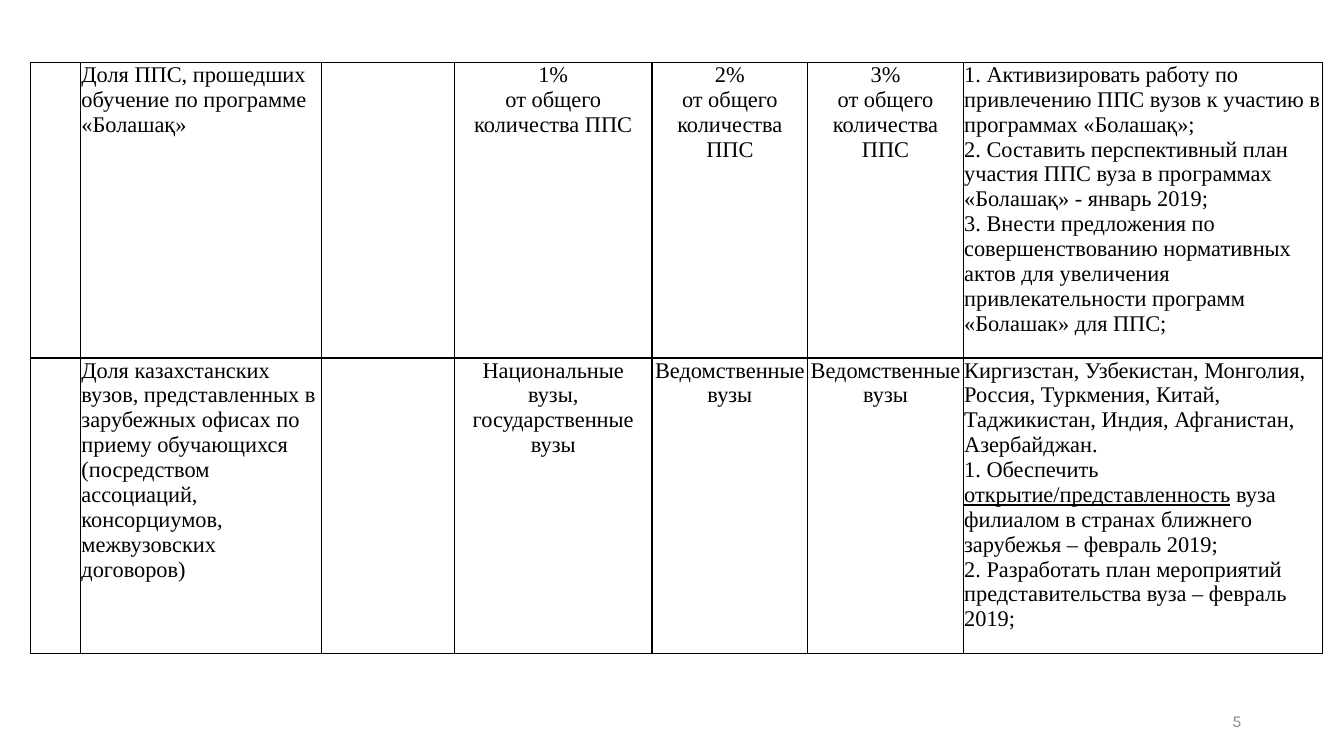
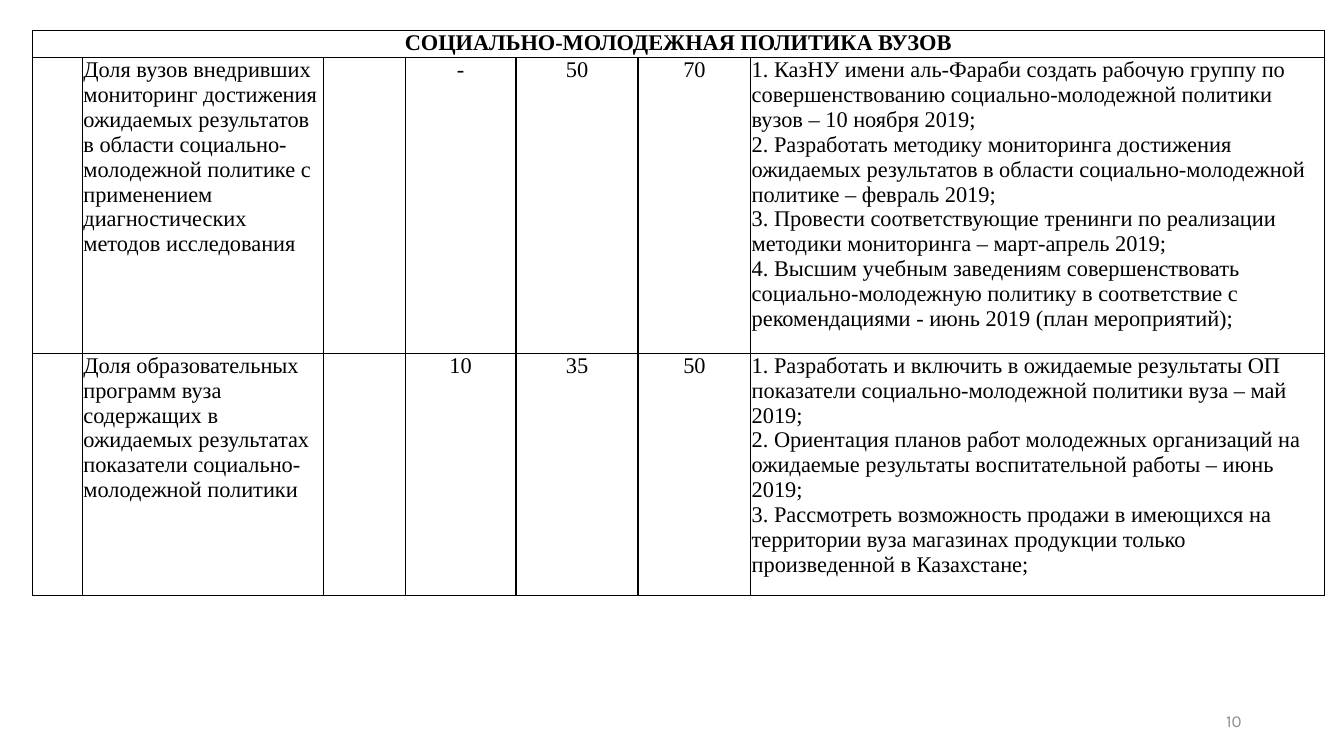
from lxml import etree
from pptx import Presentation
from pptx.dml.color import RGBColor
from pptx.enum.text import MSO_ANCHOR, PP_ALIGN
from pptx.oxml.ns import qn
from pptx.util import Pt

LEFT, CENTER, RIGHT = PP_ALIGN.LEFT, PP_ALIGN.CENTER, PP_ALIGN.RIGHT
MIDDLE = MSO_ANCHOR.MIDDLE
BLACK, GRAY = "000000", "8C8C8C"
SERIF, SANS = "Times New Roman", "Karla"
LINE = 17.8  # height of one text line in a row
INSET = 0.6
CENTERED = (3, 4, 5)  # columns with target values

STAFF = {
    "page": "5",
    "at": (21.6, 44.6),
    "cols": (36, 172, 95, 141.2, 111.2, 111.2, 256.6),
    "lines": (11, 11),
    "rows": [
        ["", "Доля ППС, прошедших обучение по программе «Болашақ»", "",
         "1%\nот общего количества ППС",
         "2%\nот общего количества ППС",
         "3%\nот общего количества ППС",
         "1. Активизировать работу по привлечению ППС вузов к участию в "
         "программах «Болашақ»;\n"
         "2. Составить перспективный план участия ППС вуза в программах "
         "«Болашақ» - январь 2019;\n"
         "3. Внести предложения по совершенствованию нормативных актов для "
         "увеличения привлекательности программ «Болашак» для ППС;"],
        ["", "Доля казахстанских вузов, представленных в зарубежных офисах по "
         "приему обучающихся (посредством ассоциаций, консорциумов, "
         "межвузовских договоров)", "",
         "Национальные вузы,\nгосударственные вузы",
         "Ведомственные вузы",
         "Ведомственные вузы",
         "Киргизстан, Узбекистан, Монголия, Россия, Туркмения, Китай, "
         "Таджикистан, Индия, Афганистан, Азербайджан.\n"
         "1. Обеспечить _открытие/представленность_ вуза филиалом в странах "
         "ближнего зарубежья – февраль 2019;\n"
         "2. Разработать план мероприятий представительства вуза – февраль "
         "2019;"],
    ],
}

YOUTH = {
    "page": "10",
    "at": (23, 22),
    "cols": (36, 172, 58.4, 79.2, 87.2, 80.6, 409.8),
    "lines": (1, 11, 9),
    "head": "СОЦИАЛЬНО-МОЛОДЕЖНАЯ ПОЛИТИКА ВУЗОВ",
    "rows": [
        ["", "Доля вузов внедривших мониторинг достижения ожидаемых "
         "результатов в области социально-молодежной политике с применением "
         "диагностических методов исследования", "", "-", "50", "70",
         "1. КазНУ имени аль-Фараби создать рабочую группу по "
         "совершенствованию социально-молодежной политики вузов – "
         "10 ноября 2019;\n"
         "2. Разработать методику мониторинга достижения ожидаемых "
         "результатов в области социально-молодежной политике – "
         "февраль 2019;\n"
         "3. Провести соответствующие тренинги по реализации методики "
         "мониторинга – март-апрель 2019;\n"
         "4. Высшим учебным заведениям совершенствовать "
         "социально-молодежную политику в соответствие с рекомендациями - "
         "июнь 2019 (план мероприятий);"],
        ["", "Доля образовательных программ вуза содержащих в ожидаемых "
         "результатах показатели социально-молодежной политики", "",
         "10", "35", "50",
         "1. Разработать и включить в ожидаемые результаты ОП показатели "
         "социально-молодежной политики вуза – май 2019;\n"
         "2. Ориентация планов работ молодежных организаций на ожидаемые "
         "результаты воспитательной работы – июнь 2019;\n"
         "3. Рассмотреть возможность продажи в имеющихся на территории вуза "
         "магазинах продукции только произведенной в Казахстане;"],
    ],
}


def color(code):
    return RGBColor.from_string(code)


def style(para, face, size, code, align, bold=False):
    para.alignment = align
    font = para.font
    font.name, font.size, font.bold = face, Pt(size), bold
    font.color.rgb = color(code)


def border(cell):
    props = cell._tc.get_or_add_tcPr()
    for side in ("lnL", "lnR", "lnT", "lnB"):
        line = etree.SubElement(props, qn("a:" + side), w=str(Pt(1)))
        fill = etree.SubElement(line, qn("a:solidFill"))
        etree.SubElement(fill, qn("a:srgbClr"), val=BLACK)


def write(cell, text, align, bold=False):
    """Fill a cell: newlines part paragraphs, underscores mark underlining."""
    frame = cell.text_frame
    for i, line in enumerate(text.split("\n")):
        para = frame.add_paragraph() if i else frame.paragraphs[0]
        style(para, SERIF, 16, BLACK, align, bold)
        for j, part in enumerate(line.split("_")):
            if part:
                run = para.add_run()
                run.text = part
                if j % 2:
                    run.font.underline = True


def add_grid(slide, data):
    cols, lines = data["cols"], data["lines"]
    left, top = data["at"]
    grid = slide.shapes.add_table(
        len(lines), len(cols), Pt(left), Pt(top),
        Pt(sum(cols)), Pt(sum(lines) * LINE)).table
    grid.first_row = grid.horz_banding = False
    for col, width in zip(grid.columns, cols):
        col.width = Pt(width)
    for row, count in zip(grid.rows, lines):
        row.height = Pt(count * LINE)
    for cell in grid.iter_cells():
        border(cell)
        cell.fill.background()
        cell.margin_left = cell.margin_right = Pt(INSET)
        cell.margin_top = cell.margin_bottom = 0

    head = data.get("head")
    if head:
        grid.cell(0, 0).merge(grid.cell(0, len(cols) - 1))
        write(grid.cell(0, 0), head, CENTER, bold=True)
    for r, row in enumerate(data["rows"], start=1 if head else 0):
        for c, text in enumerate(row):
            write(grid.cell(r, c), text, CENTER if c in CENTERED else LEFT)


def add_page(slide, text):
    box = slide.shapes.add_textbox(Pt(678), Pt(500.5), Pt(216), Pt(28.8))
    frame = box.text_frame
    frame.word_wrap = True
    frame.vertical_anchor = MIDDLE
    para = frame.paragraphs[0]
    para.text = text
    style(para, SANS, 12, GRAY, RIGHT)


def main():
    deck = Presentation()
    deck.slide_width, deck.slide_height = Pt(960), Pt(540)
    blank = deck.slide_layouts[6]
    for data in (STAFF, YOUTH):
        slide = deck.slides.add_slide(blank)
        add_page(slide, data["page"])
        add_grid(slide, data)
    deck.save("out.pptx")


if __name__ == "__main__":
    main()
